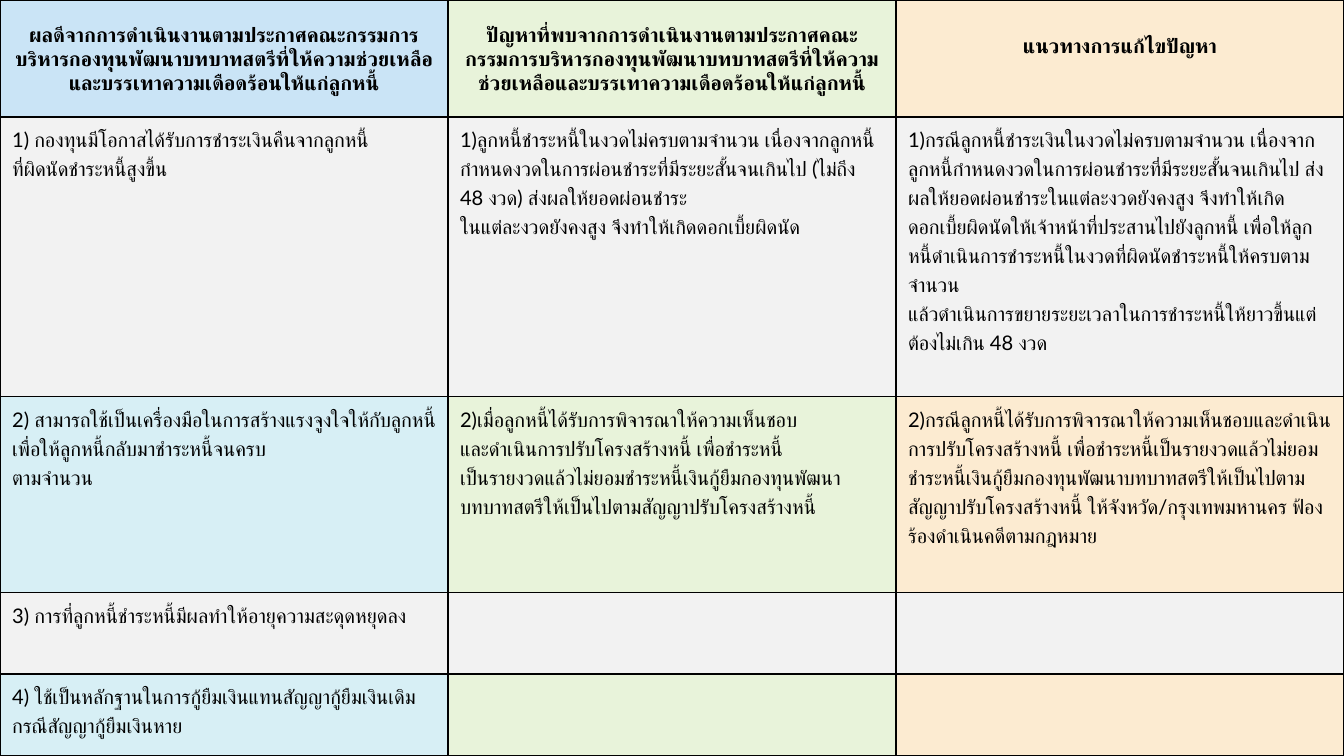
from copy import deepcopy

from lxml.etree import SubElement
from pptx import Presentation
from pptx.dml.color import RGBColor
from pptx.enum.text import MSO_ANCHOR as Anchor, PP_ALIGN as Align
from pptx.oxml.ns import qn
from pptx.util import Cm, Pt

BLACK = RGBColor(0x00, 0x00, 0x00)
GREY = RGBColor(0xF2, 0xF2, 0xF2)
BLUE = RGBColor(0xCA, 0xE4, 0xF6)
AQUA = RGBColor(0xD7, 0xEF, 0xF5)
GREEN = RGBColor(0xE8, 0xF3, 0xDA)
CREAM = RGBColor(0xFC, 0xEB, 0xD1)

SLIDE_WIDTH, SLIDE_HEIGHT = 28.22, 15.88
ROW_HEIGHTS = [2.46, 5.87, 4.11, 1.72, 1.72]

HEADINGS = [
    "ผลดีจากการดำเนินงานตามประกาศคณะกรรมการบริหารกองทุนพัฒนาบทบาทสตรีที่ให้ความช่วยเหลือและบรรเทาความเดือดร้อนให้แก่ลูกหนี้",
    "ปัญหาที่พบจากการดำเนินงานตามประกาศคณะกรรมการบริหารกองทุนพัฒนาบทบาทสตรีที่ให้ความช่วยเหลือและบรรเทาความเดือดร้อนให้แก่ลูกหนี้",
    "แนวทางการแก้ไขปัญหา",
]

# Each cell is a list of paragraphs; \n is a line break within one
FINDINGS = [
    [
        ["1) กองทุนมีโอกาสได้รับการชำระเงินคืนจากลูกหนี้\nที่ผิดนัดชำระหนี้สูงขึ้น"],
        ["1)ลูกหนี้ชำระหนี้ในงวดไม่ครบตามจำนวน เนื่องจากลูกหนี้กำหนดงวดในการผ่อนชำระที่มีระยะสั้นจนเกินไป "
         "(ไม่ถึง 48 งวด) ส่งผลให้ยอดผ่อนชำระ\nในแต่ละงวดยังคงสูง จึงทำให้เกิดดอกเบี้ยผิดนัด"],
        ["1)กรณีลูกหนี้ชำระเงินในงวดไม่ครบตามจำนวน เนื่องจากลูกหนี้กำหนดงวดในการผ่อนชำระที่มีระยะสั้นจนเกินไป "
         "ส่งผลให้ยอดผ่อนชำระในแต่ละงวดยังคงสูง จึงทำให้เกิดดอกเบี้ยผิดนัดให้เจ้าหน้าที่ประสานไปยังลูกหนี้ "
         "เพื่อให้ลูกหนี้ดำเนินการชำระหนี้ในงวดที่ผิดนัดชำระหนี้ให้ครบตามจำนวน",
         "แล้วดำเนินการขยายระยะเวลาในการชำระหนี้ให้ยาวขึ้นแต่ต้องไม่เกิน 48 งวด"],
    ],
    [
        ["2) สามารถใช้เป็นเครื่องมือในการสร้างแรงจูงใจให้กับลูกหนี้ เพื่อให้ลูกหนี้กลับมาชำระหนี้จนครบ\nตามจำนวน"],
        ["2)เมื่อลูกหนี้ได้รับการพิจารณาให้ความเห็นชอบ\nและดำเนินการปรับโครงสร้างหนี้ เพื่อชำระหนี้\n"
         "เป็นรายงวดแล้วไม่ยอมชำระหนี้เงินกู้ยืมกองทุนพัฒนาบทบาทสตรีให้เป็นไปตามสัญญาปรับโครงสร้างหนี้"],
        ["2)กรณีลูกหนี้ได้รับการพิจารณาให้ความเห็นชอบและดำเนินการปรับโครงสร้างหนี้ "
         "เพื่อชำระหนี้เป็นรายงวดแล้วไม่ยอมชำระหนี้เงินกู้ยืมกองทุนพัฒนาบทบาทสตรีให้เป็นไปตามสัญญาปรับโครงสร้างหนี้ "
         "ให้จังหวัด/กรุงเทพมหานคร ฟ้องร้องดำเนินคดีตามกฎหมาย"],
    ],
    [["3) การที่ลูกหนี้ชำระหนี้มีผลทำให้อายุความสะดุดหยุดลง"], [], []],
    [["4) ใช้เป็นหลักฐานในการกู้ยืมเงินแทนสัญญากู้ยืมเงินเดิม กรณีสัญญากู้ยืมเงินหาย"], [], []],
]


def apply(target, formats):
    for name, value in formats.items():
        setattr(target, name, value)


class SlideBuilder:
    font = {"name": "Lato", "size": Pt(12)}
    heading = {"alignment": Align.CENTER}
    body = {"line_spacing": 1.2}

    def __init__(self, slide):
        self.slide = slide

    def background(self, color):
        fill = self.slide.background.fill
        fill.solid()
        fill.fore_color.rgb = color

    def table(self, row_heights, columns):
        frame = self.slide.shapes.add_table(
            len(row_heights), columns, 0, 0, Cm(SLIDE_WIDTH), Cm(SLIDE_HEIGHT))
        grid = frame.table
        apply(grid, {"first_row": False, "horz_banding": False})
        for column in grid.columns:
            column.width = Cm(SLIDE_WIDTH / columns)
        for row, height in zip(grid.rows, row_heights):
            row.height = Cm(height)
        return grid

    def cell(self, cell, paragraphs, color, bold=False):
        self.borders(cell)
        cell.fill.solid()
        cell.fill.fore_color.rgb = color
        cell.vertical_anchor = Anchor.MIDDLE if bold else Anchor.TOP
        frame = cell.text_frame
        for index, words in enumerate(paragraphs):
            paragraph = frame.add_paragraph() if index else frame.paragraphs[0]
            self.paragraph(paragraph, words, bold)

    def paragraph(self, paragraph, words, bold):
        paragraph.text = words
        apply(paragraph, self.heading if bold else self.body)
        for run in paragraph.runs:
            apply(run.font, {**self.font, "bold": bold})
            run.font.color.rgb = BLACK
            properties = run._r.get_or_add_rPr()
            SubElement(properties, qn("a:cs"), typeface=self.font["name"])
        # Line breaks take the size of the text around them
        for line_break in paragraph._p.findall(qn("a:br")):
            line_break.append(deepcopy(properties))

    def borders(self, cell):
        properties = cell._tc.get_or_add_tcPr()
        for side in "LRTB":
            line = SubElement(properties, qn(f"a:ln{side}"), w=str(Pt(1)))
            fill = SubElement(line, qn("a:solidFill"))
            SubElement(fill, qn("a:srgbClr"), val=str(BLACK))


def main():
    deck = Presentation()
    apply(deck, {"slide_width": Cm(SLIDE_WIDTH), "slide_height": Cm(SLIDE_HEIGHT)})
    builder = SlideBuilder(deck.slides.add_slide(deck.slide_layouts[6]))
    builder.background(CREAM)
    review = builder.table(ROW_HEIGHTS, len(HEADINGS))

    # Heading row
    for column, (words, color) in enumerate(zip(HEADINGS, [BLUE, GREEN, CREAM])):
        builder.cell(review.cell(0, column), [words], color, bold=True)
    review.cell(0, 2).margin_bottom = Cm(0.65)

    # Benefits, problems and solutions, on grey and coloured rows in turn
    for row, findings in enumerate(FINDINGS, start=1):
        colors = [GREY] * 3 if row % 2 else [AQUA, GREEN, CREAM]
        for column, (paragraphs, color) in enumerate(zip(findings, colors)):
            builder.cell(review.cell(row, column), paragraphs, color)

    deck.save("out.pptx")


if __name__ == "__main__":
    main()
